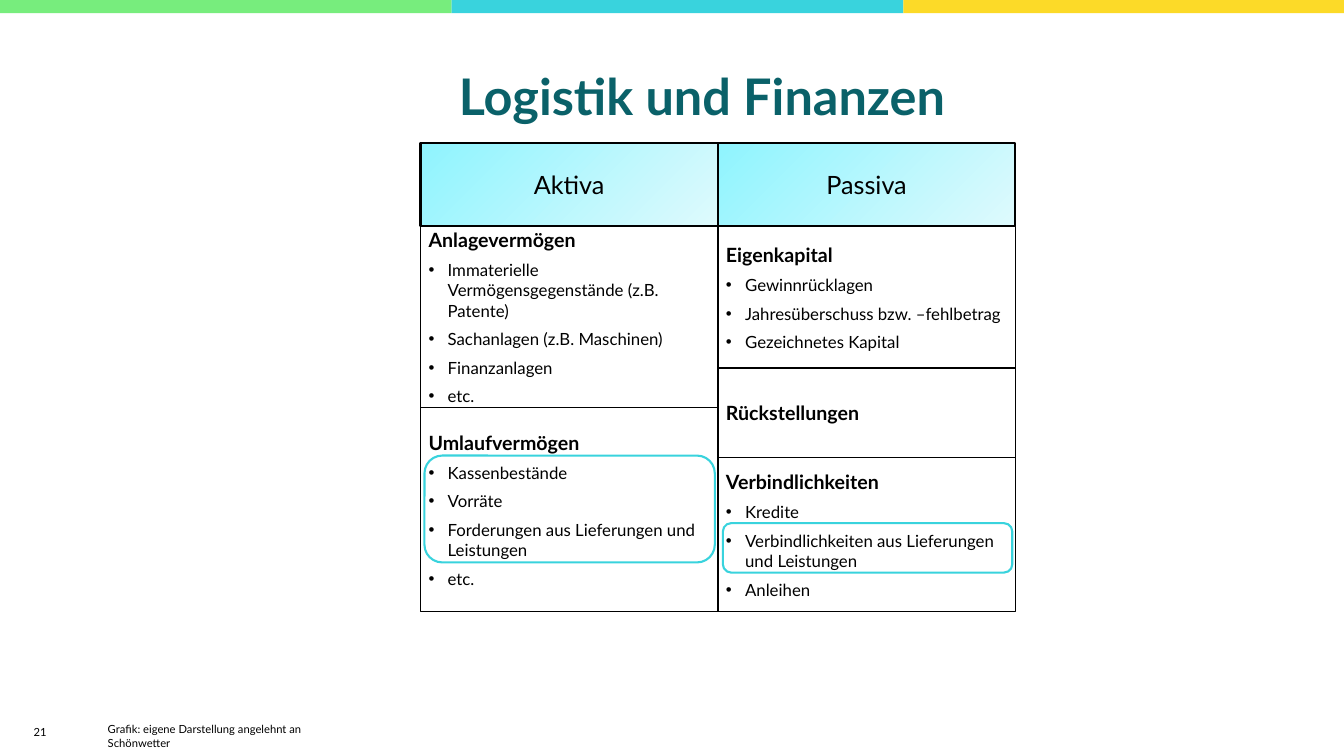
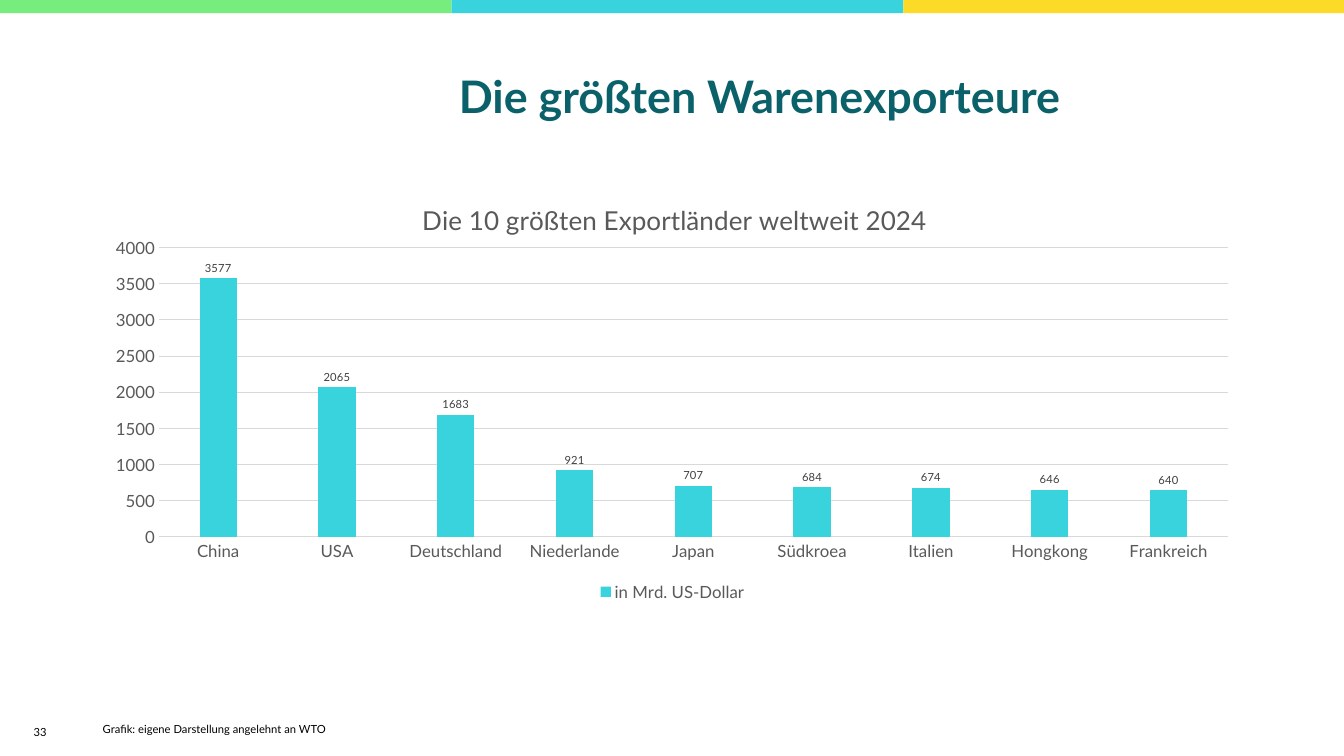
"""Build two lecture slides: a balance sheet and a chart of exporting countries."""
from lxml.etree import SubElement
from pptx import Presentation
from pptx.chart.data import CategoryChartData
from pptx.dml.color import RGBColor
from pptx.enum.chart import XL_CHART_TYPE, XL_LABEL_POSITION, XL_LEGEND_POSITION, XL_TICK_MARK
from pptx.enum.shapes import MSO_SHAPE
from pptx.enum.text import MSO_ANCHOR, MSO_AUTO_SIZE, PP_ALIGN
from pptx.oxml import parse_xml
from pptx.oxml.ns import nsdecls, qn
from pptx.util import Inches, Pt

FONT = "Lato"
BLACK, TEAL, CYAN, GREY, GRID = "000000", "0A6169", "39D3DD", "595959", "D9D9D9"
BANDS = ["77ED7D", CYAN, "FCDA28"]
SLIDE_WIDTH, BAND_WIDTH = 13.33, 4.48

BALANCE = [
    ("Aktiva", [
        ("Anlagevermögen", 1.79, [
            "Immaterielle Vermögensgegenstände (z.B. Patente)",
            "Sachanlagen (z.B. Maschinen)", "Finanzanlagen", "etc."]),
        ("Umlaufvermögen", 2.03, [
            "Kassenbestände", "Vorräte",
            "Forderungen aus Lieferungen und Leistungen", "etc."]),
    ]),
    ("Passiva", [
        ("Eigenkapital", 1.4, [
            "Gewinnrücklagen", "Jahresüberschuss bzw. –fehlbetrag",
            "Gezeichnetes Kapital"]),
        ("Rückstellungen", 0.89, []),
        ("Verbindlichkeiten", 1.53, [
            "Kredite", "Verbindlichkeiten aus Lieferungen und Leistungen",
            "Anleihen"]),
    ]),
]
HIGHLIGHTS = [(4.21, 4.52, 2.88, 1.06), (7.17, 5.19, 2.87, 0.49)]
COLUMN_LEFT, COLUMN_WIDTH = 4.17, 2.95
HEADER_TOP, HEADER_HEIGHT, BODY_TOP = 1.42, 0.82, 2.25

CHART_TITLE = "Die 10 größten Exportländer weltweit 2024"
SERIES_NAME = "in Mrd. US-Dollar"
EXPORTS = {
    "China": 3577, "USA": 2065, "Deutschland": 1683, "Niederlande": 921,
    "Japan": 707, "Südkroea": 684, "Italien": 674, "Hongkong": 646,
    "Frankreich": 640,
}


def rgb(value):
    return RGBColor.from_string(value)


def style_font(font, size, color=BLACK, bold=False):
    font.name, font.size, font.bold = FONT, Pt(size), bold
    font.color.rgb = rgb(color)


def add_box(page, area, line=None, weight=1, kind=MSO_SHAPE.RECTANGLE):
    box = page.shapes.add_shape(kind, *map(Inches, area))
    box.shadow.inherit = False
    box.fill.background()
    if line:
        box.line.color.rgb = rgb(line)
        box.line.width = Pt(weight)
    else:
        box.line.fill.background()
    return box


def add_text(page, area, text, align=PP_ALIGN.LEFT, anchor=MSO_ANCHOR.TOP):
    frame = page.shapes.add_textbox(*map(Inches, area)).text_frame
    frame.word_wrap = True
    frame.vertical_anchor = anchor
    paragraph = frame.paragraphs[0]
    paragraph.text, paragraph.alignment = text, align
    style_font(paragraph.font, 8)


def add_page(deck, title, title_size, number, source, source_left):
    page = deck.slides.add_slide(deck.slide_layouts[5])
    for index, color in enumerate(BANDS):
        left = index * BAND_WIDTH
        width = min(BAND_WIDTH, SLIDE_WIDTH - left)
        band = add_box(page, (left, 0, width, 0.13))
        band.fill.solid()
        band.fill.fore_color.rgb = rgb(color)
    heading = page.shapes.title
    heading.left, heading.top = Inches(4.45), Inches(0.38)
    heading.width, heading.height = Inches(8.42), Inches(1.2)
    frame = heading.text_frame
    frame.text = title
    frame.auto_size = MSO_AUTO_SIZE.NONE
    frame.vertical_anchor = MSO_ANCHOR.MIDDLE
    paragraph = frame.paragraphs[0]
    paragraph.alignment, paragraph.line_spacing = PP_ALIGN.LEFT, 0.9
    style_font(paragraph.font, title_size, TEAL, True)
    add_text(page, (0.07, 7.06, 0.49, 0.4), number, PP_ALIGN.RIGHT, MSO_ANCHOR.MIDDLE)
    add_text(page, (source_left, 7.12, 2.75, 0.37), source)
    return page


def add_header(page, left, text):
    box = add_box(page, (left, HEADER_TOP, COLUMN_WIDTH, HEADER_HEIGHT), BLACK, 1.5)
    box.fill.gradient()
    box.fill.gradient_angle = 315
    for stop, position, color in zip(box.fill.gradient_stops, (0, 1), ("8FF4FE", "DEFAFD")):
        stop.position, stop.color.rgb = position, rgb(color)
    paragraph = box.text_frame.paragraphs[0]
    paragraph.text, paragraph.alignment = text, PP_ALIGN.CENTER
    style_font(paragraph.font, 18)


def add_section(page, area, heading, items):
    frame = add_box(page, area, BLACK).text_frame
    frame.word_wrap = True
    frame.vertical_anchor = MSO_ANCHOR.MIDDLE
    frame.margin_left = frame.margin_right = Inches(0.08)
    for index, text in enumerate([heading, *items]):
        paragraph = frame.add_paragraph() if index else frame.paragraphs[0]
        paragraph.text = text
        paragraph.alignment, paragraph.space_after = PP_ALIGN.LEFT, Pt(6)
        if index:
            properties = paragraph._p.get_or_add_pPr()
            properties.set("marL", str(Inches(0.19)))
            properties.set("indent", str(-Inches(0.19)))
            SubElement(properties, qn("a:buFont"), typeface="Arial")
            SubElement(properties, qn("a:buChar"), char="•")
        style_font(paragraph.font, 12 if index else 14, bold=not index)


def add_balance(page):
    for column, (header, sections) in enumerate(BALANCE):
        left, top = COLUMN_LEFT + column * COLUMN_WIDTH, BODY_TOP
        add_header(page, left, header)
        for heading, height, items in sections:
            add_section(page, (left, top, COLUMN_WIDTH, height), heading, items)
            top += height
    for area in HIGHLIGHTS:
        add_box(page, area, CYAN, 1.5, MSO_SHAPE.ROUNDED_RECTANGLE)


def set_layout(parent, index, **values):
    """Place a chart part by fractions of the chart area."""
    for old in parent.findall(qn("c:layout")):
        parent.remove(old)
    layout = parse_xml(f"<c:layout {nsdecls('c')}><c:manualLayout/></c:layout>")
    for name, value in values.items():
        SubElement(layout[0], qn(f"c:{name}"), val=str(value))
    parent.insert(index, layout)


def add_export_chart(page):
    data = CategoryChartData()
    data.categories = list(EXPORTS)
    data.add_series(SERIES_NAME, list(EXPORTS.values()))
    area = map(Inches, (0.92, 1.73, 11.5, 4.28))
    chart = page.shapes.add_chart(XL_CHART_TYPE.COLUMN_CLUSTERED, *area, data).chart
    style_font(chart.font, 10)

    chart.has_title = True
    title = chart.chart_title
    title.text_frame.text = CHART_TITLE
    style_font(title.text_frame.paragraphs[0].font, 18.6, GREY)
    title.include_in_layout = False
    set_layout(title._element, 1, xMode="edge", yMode="edge", x=0.28, y=0.05)
    set_layout(chart._chartSpace.chart.plotArea, 0, layoutTarget="inner",
               xMode="edge", yMode="edge", x=0.057, y=0.17, w=0.922, h=0.67)

    chart.has_legend = True
    chart.legend.position = XL_LEGEND_POSITION.BOTTOM
    chart.legend.include_in_layout = False
    style_font(chart.legend.font, 12, GREY)

    for axis in (chart.category_axis, chart.value_axis):
        axis.major_tick_mark = axis.minor_tick_mark = XL_TICK_MARK.NONE
        style_font(axis.tick_labels.font, 12, GREY)
    values = chart.value_axis
    values.minimum_scale, values.maximum_scale, values.major_unit = 0, 4000, 500
    values.format.line.fill.background()
    for line in (chart.category_axis.format.line, values.major_gridlines.format.line):
        line.color.rgb, line.width = rgb(GRID), Pt(0.75)

    plot = chart.plots[0]
    plot.gap_width, plot.overlap, plot.vary_by_categories = 219, -27, False
    fill = plot.series[0].format.fill
    fill.solid()
    fill.fore_color.rgb = rgb(CYAN)
    plot.has_data_labels = True
    labels = plot.data_labels
    labels.show_value, labels.position = True, XL_LABEL_POSITION.OUTSIDE_END
    style_font(labels.font, 8, "404040")


def main():
    deck = Presentation()
    deck.slide_width, deck.slide_height = Inches(SLIDE_WIDTH), Inches(7.5)
    add_balance(add_page(deck, "Logistik und Finanzen", 36, "21",
                         "Grafik: eigene Darstellung angelehnt an Schönwetter", 0.97))
    add_export_chart(add_page(deck, "Die größten Warenexporteure", 32, "33",
                              "Grafik: eigene Darstellung angelehnt an WTO", 0.92))
    deck.save("out.pptx")


if __name__ == "__main__":
    main()
